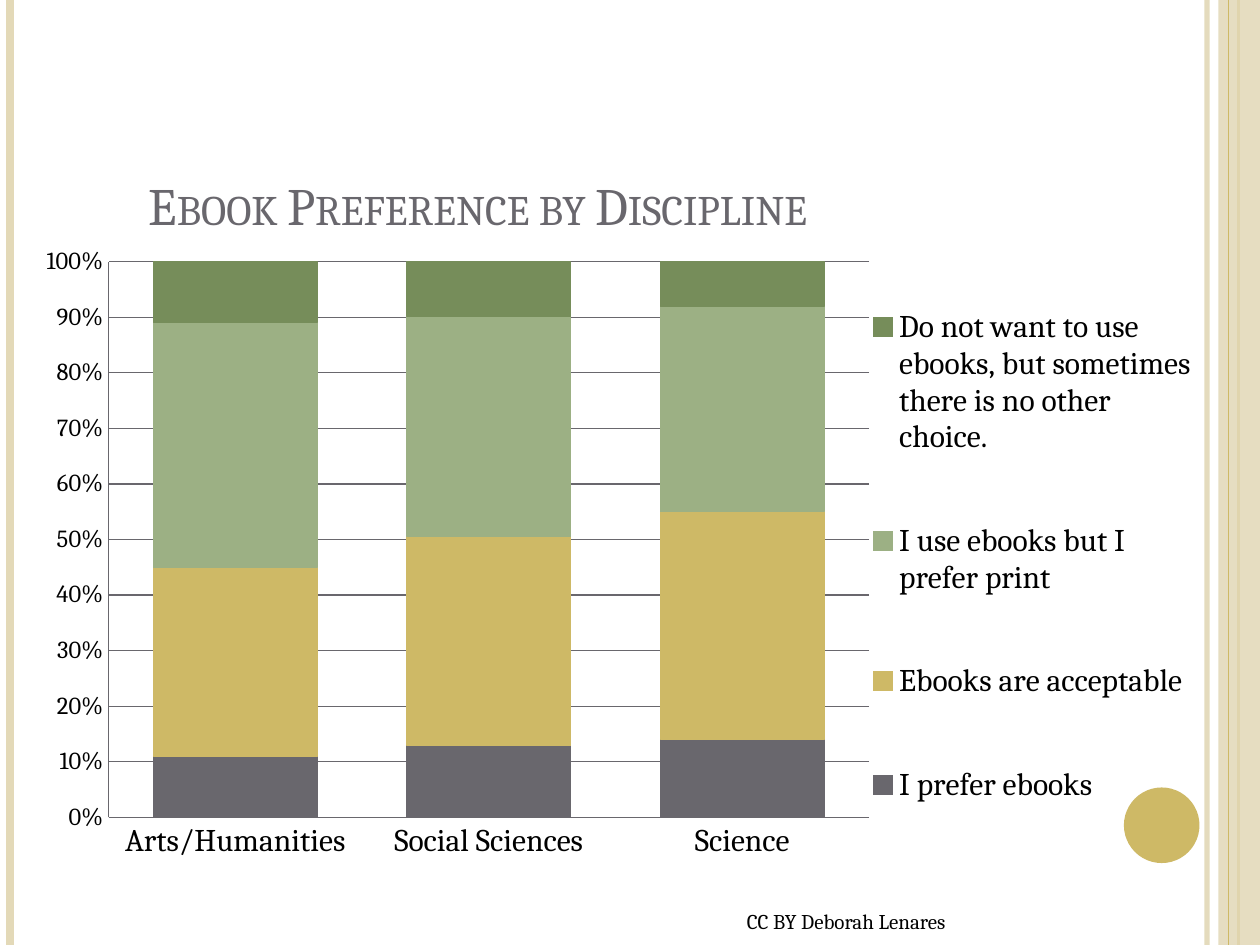
from lxml.etree import SubElement
from pptx import Presentation
from pptx.chart.data import CategoryChartData
from pptx.dml.color import RGBColor
from pptx.enum.chart import XL_CHART_TYPE, XL_LEGEND_POSITION, XL_TICK_MARK
from pptx.enum.shapes import MSO_CONNECTOR, MSO_SHAPE
from pptx.enum.text import MSO_ANCHOR
from pptx.oxml import parse_xml
from pptx.oxml.ns import nsdecls, qn
from pptx.util import Inches, Pt

COLORS = {
    "sand": "E3D9B8",
    "gold": "CEB966",
    "gray": "69676D",
    "sage": "9CB084",
    "green": "768D5A",
    "axis": "69676D",
    "black": "000000",
}
FONT = "Cambria"
CATEGORIES = ["Arts/Humanities", "Social Sciences", "Science"]
SERIES = [
    ("I prefer ebooks", [11, 13, 14], "gray"),
    ("Ebooks are acceptable", [34, 38, 41], "gold"),
    ("I use ebooks but I prefer print", [44, 40, 37], "sage"),
    ("Do not want to use ebooks, but sometimes there is no other choice.", [11, 10, 8], "green"),
]


class SlideBuilder:
    def __init__(self, presentation, columns=10, rows=7.5):
        self.column = presentation.slide_width / columns
        self.row = presentation.slide_height / rows
        self.rows = rows
        self.slide = presentation.slides.add_slide(presentation.slide_layouts[6])

    def box(self, left, top, width, height):
        return (int(left * self.column), int(top * self.row),
                int(width * self.column), int(height * self.row))

    def color(self, name):
        return RGBColor.from_string(COLORS[name])

    def set_alpha(self, properties, percent):
        color = next(properties.iter(qn("a:srgbClr")))
        SubElement(color, qn("a:alpha")).set("val", str(percent * 1000))

    def rule(self, position, color, width, opacity=100):
        left, top, _, height = self.box(position, 0, 0, self.rows)
        connector = self.slide.shapes.add_connector(MSO_CONNECTOR.STRAIGHT, left, top, left, height)
        connector.line.color.rgb = self.color(color)
        connector.line.width = Pt(width)
        properties = connector._element.spPr
        if opacity < 100:
            self.set_alpha(properties, opacity)
        SubElement(properties, qn("a:effectLst"))

    def shape(self, kind, box, color, opacity=100):
        shape = self.slide.shapes.add_shape(kind, *self.box(*box))
        shape.shadow.inherit = False
        shape.fill.solid()
        shape.fill.fore_color.rgb = self.color(color)
        shape.line.fill.background()
        if opacity < 100:
            self.set_alpha(shape._element.spPr, opacity)

    def text(self, words, box, size, color, anchor, small_caps=False):
        frame = self.slide.shapes.add_textbox(*self.box(*box)).text_frame
        frame.word_wrap = True
        frame.vertical_anchor = anchor
        run = frame.paragraphs[0].add_run()
        run.text = words
        self.style_font(run.font, size, color)
        if small_caps:
            run.font._element.set("cap", "small")

    def style_font(self, font, size, color="black"):
        font.name = FONT
        font.size = Pt(size)
        font.color.rgb = self.color(color)

    def style_line(self, line, color):
        line.color.rgb = self.color(color)
        line.width = Pt(0.75)

    def layout(self, left, top, width, height, inner=False):
        target = '<c:layoutTarget val="inner"/>' if inner else ""
        sizes = {"x": left, "y": top, "w": width, "h": height}
        modes = '<c:xMode val="edge"/><c:yMode val="edge"/>'
        values = "".join(f'<c:{name} val="{value}"/>' for name, value in sizes.items())
        return parse_xml(f'<c:layout {nsdecls("c")}><c:manualLayout>{target}{modes}{values}'
                         "</c:manualLayout></c:layout>")

    def stacked_chart(self, box, categories, series_rows):
        data = CategoryChartData()
        data.categories = categories
        for name, values, _ in series_rows:
            data.add_series(name, values)
        chart = self.slide.shapes.add_chart(
            XL_CHART_TYPE.COLUMN_STACKED_100, *self.box(*box), data).chart
        chart.has_title = False
        self.style_font(chart.font, 10)
        plot = chart.plots[0]
        plot.gap_width = 55
        plot.overlap = 100
        plot.vary_by_categories = False
        for series, (_, _, color) in zip(plot.series, series_rows):
            series.format.fill.solid()
            series.format.fill.fore_color.rgb = self.color(color)
            self.style_line(series.format.line, color)
        for axis, size in ((chart.category_axis, 18), (chart.value_axis, 14)):
            axis.major_tick_mark = axis.minor_tick_mark = XL_TICK_MARK.NONE
            self.style_font(axis.tick_labels.font, size)
            self.style_line(axis.format.line, "axis")
        value_axis = chart.value_axis
        value_axis.minimum_scale, value_axis.maximum_scale, value_axis.major_unit = 0, 1, 0.1
        value_axis.tick_labels.number_format = "0%"
        value_axis.tick_labels.number_format_is_linked = False
        value_axis.has_major_gridlines = True
        self.style_line(value_axis.major_gridlines.format.line, "axis")
        chart.has_legend = True
        legend = chart.legend
        legend.position = XL_LEGEND_POSITION.RIGHT
        legend.include_in_layout = False
        self.style_font(legend.font, 18)
        area = chart._chartSpace.chart.plotArea
        for old in area.findall(qn("c:layout")):
            area.remove(old)
        area.insert(0, self.layout(0.09, 0.03, 0.63, 0.84, inner=True))
        for old in legend._element.findall(qn("c:layout")):
            legend._element.remove(old)
        legend._element.find(qn("c:legendPos")).addnext(self.layout(0.72, 0, 0.27, 0.95))


def main():
    presentation = Presentation()
    presentation.slide_width = Inches(10)
    presentation.slide_height = Inches(7.5)
    builder = SlideBuilder(presentation)
    builder.rule(9.58, "sand", 3, 93)
    builder.rule(0.08, "sand", 4.5)
    builder.rule(9.83, "gold", 1.5)
    builder.shape(MSO_SHAPE.RECTANGLE, (9.67, 0, 0.33, 7.5), "sand", 87)
    builder.rule(9.75, "gold", 0.75)
    builder.shape(MSO_SHAPE.OVAL, (8.92, 6.25, 0.6, 0.6), "gold")
    builder.text("Ebook Preference by Discipline", (1.08, 0.75, 8.25, 1.17), 30, "gray",
                 MSO_ANCHOR.BOTTOM, small_caps=True)
    builder.text("CC BY Deborah Lenares", (5.83, 7.11, 3.83, 0.4), 12, "black", MSO_ANCHOR.MIDDLE)
    builder.stacked_chart((0, 1.92, 9.58, 5.25), CATEGORIES, SERIES)
    presentation.save("out.pptx")


if __name__ == "__main__":
    main()
